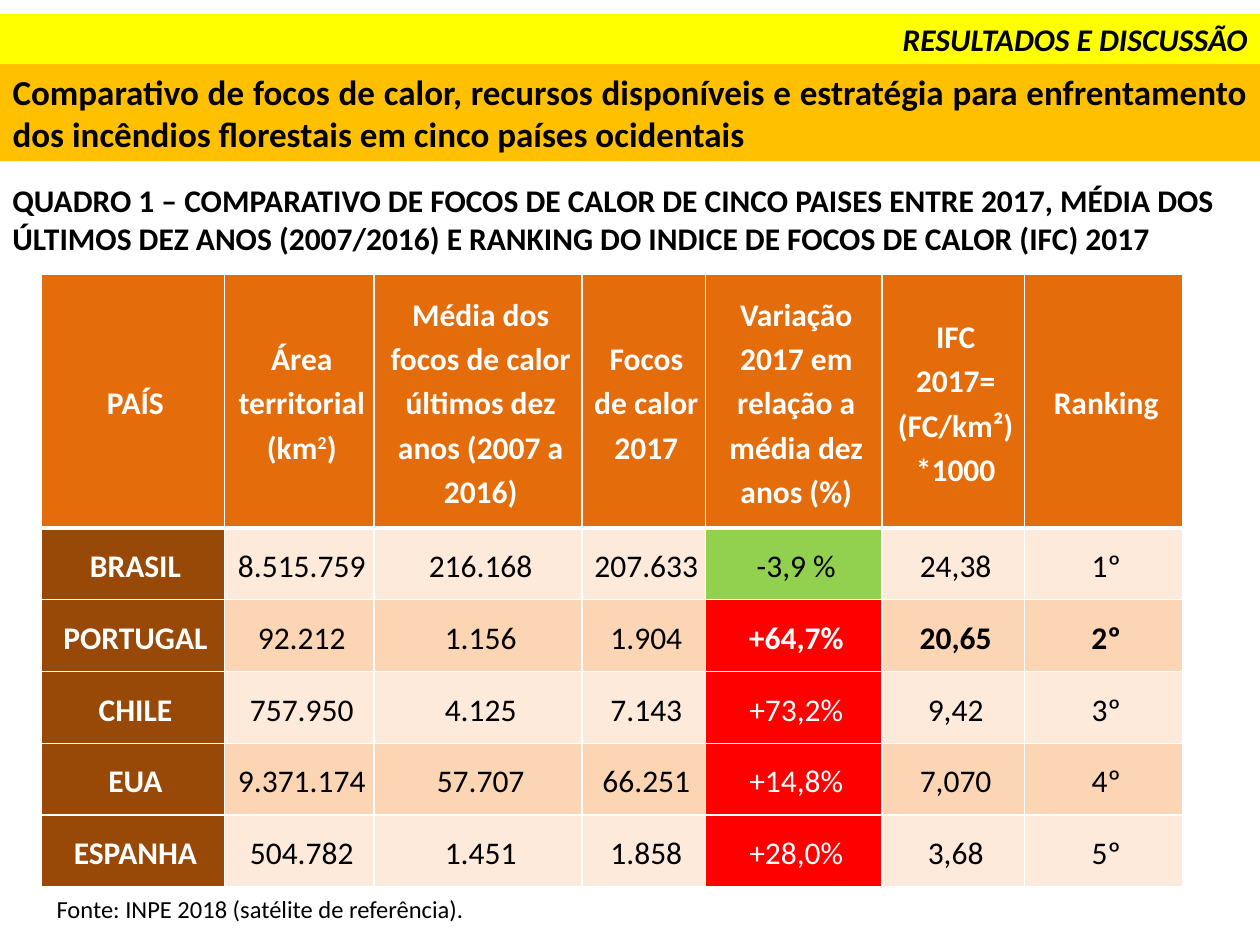
from dataclasses import dataclass

from lxml.etree import SubElement
from pptx import Presentation
from pptx.dml.color import RGBColor
from pptx.enum.shapes import MSO_SHAPE as Shape
from pptx.enum.text import MSO_ANCHOR as Anchor, MSO_AUTO_SIZE as AutoSize, PP_ALIGN as Align
from pptx.oxml.ns import qn
from pptx.util import Inches, Pt


@dataclass(frozen=True)
class Theme:
    font: str = "Calibri"
    heading: int = 20
    text: int = 18
    source: int = 14
    black: str = "000000"
    white: str = "FFFFFF"
    yellow: str = "FFFF00"
    gold: str = "FFC000"
    header: str = "E46C0A"
    country: str = "984807"
    bands: tuple = ("FDEADA", "FCD5B5")
    fall: str = "92D050"
    rise: str = "FF0000"


THEME = Theme()
SECTION = "RESULTADOS E DISCUSSÃO"
HEADING = ("Comparativo de focos de calor, recursos disponíveis e estratégia para "
           "enfrentamento dos incêndios florestais em cinco países ocidentais")
CAPTION = ("QUADRO 1 – COMPARATIVO DE FOCOS DE CALOR DE CINCO PAISES ENTRE 2017, MÉDIA DOS "
           "ÚLTIMOS DEZ ANOS (2007/2016) E RANKING DO INDICE DE FOCOS DE CALOR (IFC) 2017")
SOURCE = "Fonte: INPE 2018 (satélite de referência)."
HEADERS = [
    ("PAÍS",),
    ("Área territorial (km", "2", ")"),
    ("Média dos focos de calor últimos dez anos (2007 a 2016)",),
    ("Focos de calor 2017",),
    ("Variação 2017 em relação a média dez anos (%)",),
    ("IFC 2017= (FC/km²)*1000",),
    ("Ranking",),
]
COUNTRIES = [
    ("BRASIL", "8.515.759", "216.168", "207.633", "-3,9 %", "24,38", "1º"),
    ("PORTUGAL", "92.212", "1.156", "1.904", "+64,7%", "20,65", "2º"),
    ("CHILE", "757.950", "4.125", "7.143", "+73,2%", "9,42", "3º"),
    ("EUA", "9.371.174", "57.707", "66.251", "+14,8%", "7,070", "4º"),
    ("ESPANHA", "504.782", "1.451", "1.858", "+28,0%", "3,68", "5º"),
]
EMPHASIS = "PORTUGAL"
CHANGE_COLUMN = 4
COLUMN_WIDTHS = (1.45, 1.19, 1.65, 0.98, 1.4, 1.13, 1.26)
HEADER_HEIGHT, ROW_HEIGHT = 2.01, 0.57


def add_run(para, text, size, color, bold=False, italic=False):
    span = para.add_run()
    span.text = text
    font = span.font
    font.name, font.size = THEME.font, Pt(size)
    font.bold, font.italic = bold, italic
    font.color.rgb = RGBColor.from_string(color)
    return span


def paint(target, color):
    target.fill.solid()
    target.fill.fore_color.rgb = RGBColor.from_string(color)


def write_box(box, text, size, align=Align.LEFT, anchor=Anchor.TOP, bold=False, italic=False):
    frame = box.text_frame
    frame.word_wrap = True
    frame.auto_size = AutoSize.NONE
    frame.vertical_anchor = anchor
    para = frame.paragraphs[0]
    para.alignment = align
    add_run(para, text, size, THEME.black, bold, italic)


def add_border(cell, side, width):
    line = SubElement(cell._tc.get_or_add_tcPr(), qn(f"a:ln{side}"), w=str(Pt(width)))
    fill = SubElement(line, qn("a:solidFill"))
    SubElement(fill, qn("a:srgbClr"), val=THEME.white)


def fill_cell(cell, pieces, fill, color, bold, top=1, bottom=1):
    for side, width in (("L", 1), ("R", 1), ("T", top), ("B", bottom)):
        add_border(cell, side, width)
    paint(cell, fill)
    cell.vertical_anchor = Anchor.MIDDLE
    cell.margin_left = cell.margin_right = Inches(0.05)
    cell.margin_top = cell.margin_bottom = Inches(0.07)
    para = cell.text_frame.paragraphs[0]
    para.alignment = Align.CENTER
    para.line_spacing = 1.15
    para._p.get_or_add_pPr().set("marL", str(Inches(0.04)))
    for index, piece in enumerate(pieces):
        span = add_run(para, piece, THEME.text, color, bold)
        if index == 1:
            span.font._element.set("baseline", "30000")


def body_style(row, column, values):
    strong = values[0] == EMPHASIS and column >= CHANGE_COLUMN
    if column == 0:
        return THEME.country, THEME.white, True
    if column == CHANGE_COLUMN and values[column].startswith("+"):
        return THEME.rise, THEME.white, strong
    if column == CHANGE_COLUMN:
        return THEME.fall, THEME.black, strong
    return THEME.bands[(row - 1) % 2], THEME.black, strong


def add_comparison(page):
    height = HEADER_HEIGHT + ROW_HEIGHT * len(COUNTRIES)
    table = page.shapes.add_table(
        len(COUNTRIES) + 1, len(HEADERS), Inches(0.33), Inches(2.18),
        Inches(sum(COLUMN_WIDTHS)), Inches(height)).table
    for column, width in zip(table.columns, COLUMN_WIDTHS):
        column.width = Inches(width)
    for index, row in enumerate(table.rows):
        row.height = Inches(ROW_HEIGHT if index else HEADER_HEIGHT)
    for column, pieces in enumerate(HEADERS):
        fill_cell(table.cell(0, column), pieces, THEME.header, THEME.white, True, bottom=3)
    for row, values in enumerate(COUNTRIES, 1):
        for column, value in enumerate(values):
            fill_cell(table.cell(row, column), (value,), *body_style(row, column, values),
                      top=3 if row == 1 else 1)


def main():
    deck = Presentation()
    deck.slide_width, deck.slide_height = Inches(10), Inches(7.5)
    page = deck.slides.add_slide(deck.slide_layouts[5])

    section = page.shapes.add_shape(
        Shape.RECTANGLE, Inches(0), Inches(0.11), Inches(10), Inches(0.4))
    section.shadow.inherit = False
    section.line.fill.background()
    paint(section, THEME.yellow)
    write_box(section, SECTION, THEME.text, Align.RIGHT, bold=True, italic=True)

    heading = page.shapes.title
    heading.left, heading.top = Inches(0), Inches(0.51)
    heading.width, heading.height = Inches(10), Inches(0.77)
    paint(heading, THEME.gold)
    write_box(heading, HEADING, THEME.heading, Align.JUSTIFY, bold=True)

    caption = page.shapes.add_textbox(Inches(0), Inches(1.39), Inches(9.82), Inches(0.71))
    write_box(caption, CAPTION, THEME.text, bold=True)

    add_comparison(page)

    source = page.shapes.add_textbox(Inches(0.35), Inches(7.05), Inches(4.65), Inches(0.34))
    write_box(source, SOURCE, THEME.source)

    deck.save("out.pptx")


if __name__ == "__main__":
    main()
